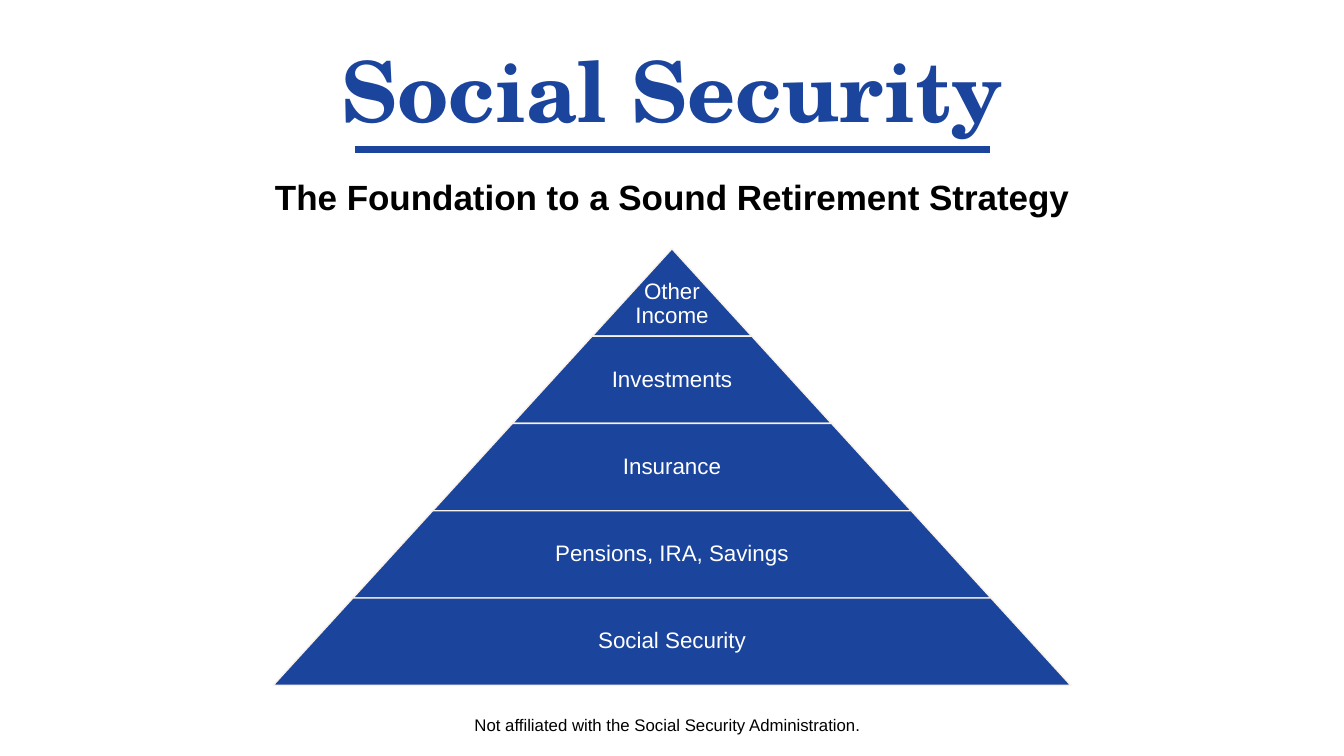
from lxml import etree
from pptx import Presentation
from pptx.dml.color import RGBColor
from pptx.enum.shapes import MSO_CONNECTOR, MSO_SHAPE
from pptx.enum.text import MSO_ANCHOR, PP_ALIGN
from pptx.oxml.ns import qn
from pptx.util import Cm, Pt

BLUE = RGBColor(0x1B, 0x44, 0x9C)
BLACK = RGBColor(0, 0, 0)
WHITE = RGBColor(255, 255, 255)
CREAM = RGBColor(0xF9, 0xF2, 0xE8)
CENTER = PP_ALIGN.CENTER
MIDDLE = MSO_ANCHOR.MIDDLE
TRAPEZOID = MSO_SHAPE.TRAPEZOID
STRAIGHT = MSO_CONNECTOR.STRAIGHT

WIDTH = 33.87
TIERS = ["Other\vIncome", "Investments", "Insurance",
         "Pensions, IRA, Savings", "Social Security"]
TOP = 6.27
STEP = 2.2
GROWTH = 4.02

deck = Presentation()
deck.slide_width = Cm(WIDTH)
deck.slide_height = Cm(19.05)
slide = deck.slides.add_slide(deck.slide_layouts[6])
shapes = slide.shapes


def add_text(text, top, width, height, size, color, bold=False, face="Arial"):
    """Add a horizontally centred text box and return its frame."""
    box = shapes.add_textbox(Cm((WIDTH - width) / 2), Cm(top), Cm(width), Cm(height))
    frame = box.text_frame
    frame.word_wrap = True
    frame.text = text
    line = frame.paragraphs[0]
    line.alignment = CENTER
    line.font.size = Pt(size)
    line.font.name = face
    line.font.bold = bold
    line.font.color.rgb = color
    return frame


# Heading
add_text("Social Security", 0.84, WIDTH, 2.82, 60, BLUE, True, "TeX Gyre Schola")
add_text("The Foundation to a Sound Retirement Strategy", 4.29, 27.76, 1.32, 25, BLACK, True)

rule = shapes.add_connector(STRAIGHT, Cm(8.94), Cm(3.76), Cm(24.94), Cm(3.76))
rule.line.color.rgb = BLUE
rule.line.width = Pt(5)
etree.SubElement(rule._element.spPr, qn("a:effectLst"))

# Pyramid
for row, label in enumerate(TIERS):
    top = TOP + row * STEP
    width = GROWTH * (row + 1)
    tier = shapes.add_shape(TRAPEZOID, Cm((WIDTH - width) / 2), Cm(top), Cm(width), Cm(STEP))
    tier.adjustments[0] = 0.913
    tier.shadow.inherit = False
    tier.fill.solid()
    tier.fill.fore_color.rgb = BLUE
    tier.line.color.rgb = CREAM
    tier.line.width = Pt(1)

    frame = add_text(label, top, max(GROWTH, width * 0.65), STEP, 16, WHITE)
    frame.vertical_anchor = MIDDLE
    frame.margin_left = frame.margin_right = frame.margin_bottom = Cm(0.05)
    # The tip is narrow, so its label sits lower
    frame.margin_top = Cm(0.05 if row else 0.63)
    frame.paragraphs[0].line_spacing = 0.9

# Footer
footer = add_text("Not affiliated with the Social Security Administration.",
                  17.88, WIDTH, 0.77, 12, BLACK)
footer.margin_right = Cm(0.47)

deck.save("out.pptx")
